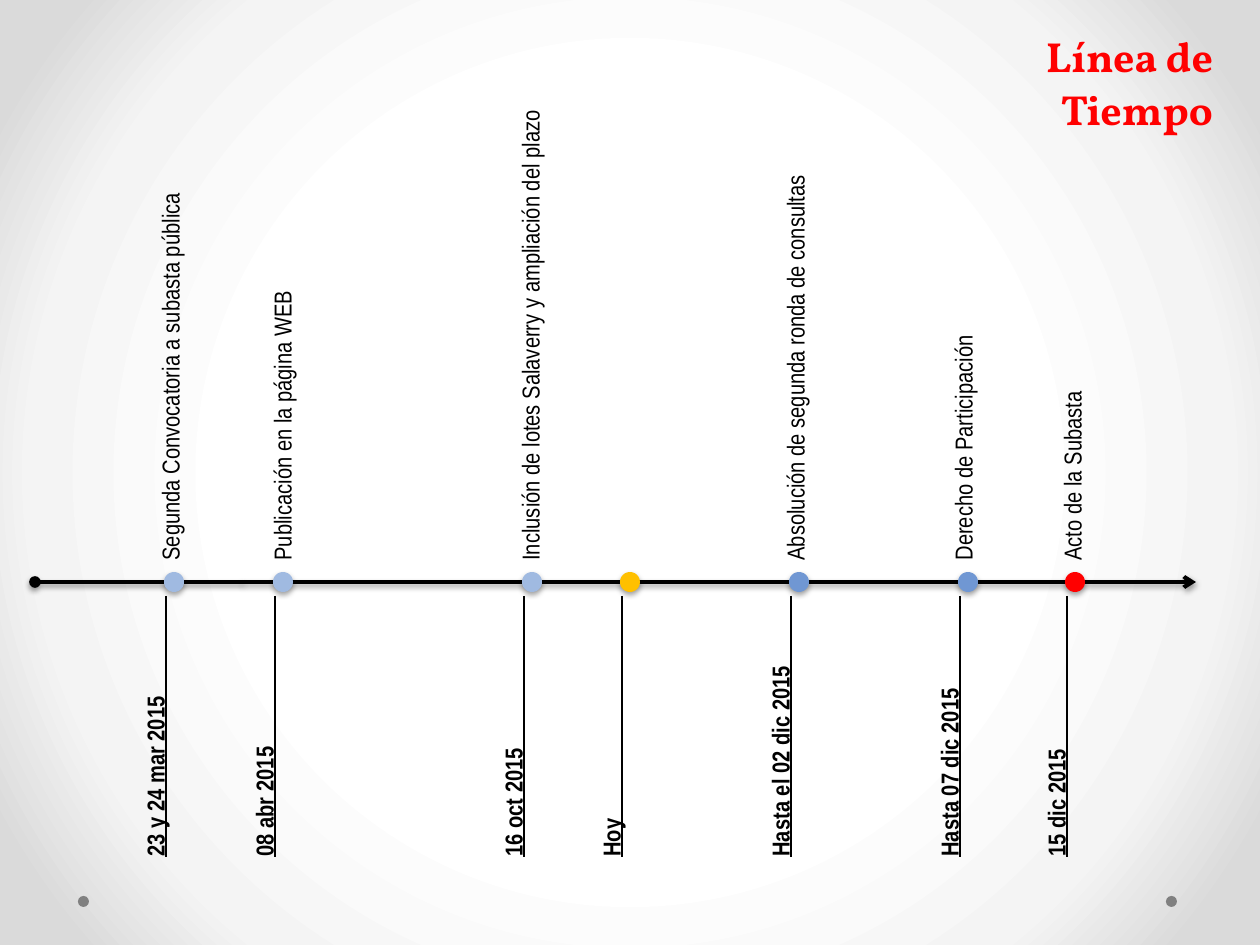
import pptx
import pptx.util
import pptx.oxml
import pptx.oxml.ns
from pptx.dml.color import RGBColor
from pptx.enum.shapes import MSO_CONNECTOR, MSO_SHAPE
from pptx.enum.text import MSO_ANCHOR, PP_ALIGN

THEME = {
    "black": "000000", "red": "FF0000", "grey": "808080", "amber": "FFC000",
    "pale_blue": "A0BAE1", "blue": "7097D3",
    "background": [(50, "FFFFFF"), (76, "F4F4F4"), (92, "DADADA")],
    "title_font": "Vollkorn", "label_font": "Arial Narrow",
    "title_size": 24, "label_size": 14, "axis_width": 2.25, "stem_width": 1.25,
}
PX = 914400 / 126
NAMESPACE = pptx.oxml.ns.nsdecls("a")


def box(*lengths):
    return [pptx.util.Emu(round(length * PX)) for length in lengths]


def add_text(slide, text, place, font, size, color="black", bold=False,
             underline=False, align=PP_ALIGN.LEFT, spacing=None, vertical=False):
    shape = slide.shapes.add_textbox(*box(*place))
    frame = shape.text_frame
    frame.word_wrap = True
    if vertical:
        frame._txBody.bodyPr.set("vert", "vert270")
    else:
        frame.vertical_anchor = MSO_ANCHOR.MIDDLE
        frame.margin_left = frame.margin_right = box(5)[0]
        frame.margin_top = frame.margin_bottom = 0
    paragraph = frame.paragraphs[0]
    paragraph.alignment = align
    if spacing:
        paragraph.line_spacing = pptx.util.Pt(spacing)
    run = paragraph.add_run()
    run.text = text
    run.font.name = THEME[font]
    run.font.size = pptx.util.Pt(THEME[size])
    run.font.color.rgb = RGBColor.from_string(THEME[color])
    run.font.bold = bold
    run.font.underline = underline


presentation = pptx.Presentation()
presentation.slide_width, presentation.slide_height = box(1260, 945)
slide = presentation.slides.add_slide(presentation.slide_layouts[6])

# Radial background
fill = slide.background.fill
fill.gradient()
gradient = slide.background._cSld.bg.bgPr.find(pptx.oxml.ns.qn("a:gradFill"))
stops = "".join(f'<a:gs pos="{position * 1000}"><a:srgbClr val="{color}"/></a:gs>'
                for position, color in THEME["background"])
gradient.getparent().replace(gradient, pptx.oxml.parse_xml(
    f'<a:gradFill {NAMESPACE} rotWithShape="1"><a:gsLst>{stops}</a:gsLst>'
    '<a:path path="circle"><a:fillToRect l="50000" t="50000" r="50000" b="50000"/>'
    '</a:path></a:gradFill>'))

# Title
add_text(slide, "Línea de Tiempo", (890, 55, 328, 52), "title_font", "title_size",
         color="red", bold=True, align=PP_ALIGN.RIGHT, spacing=30)

# Lines: two axis segments, then one stem per date
# Milestones: dot left, dot color, date, description, description left and top
milestones = [
    (164, "pale_blue", "23 y 24 mar 2015", "Segunda Convocatoria a subasta pública", 149, 174),
    (273, "pale_blue", "08 abr 2015", "Publicación en la página WEB", 261, 272),
    (522, "pale_blue", "16 oct 2015", "Inclusión de lotes Salaverry y ampliación del plazo", 509, 91),
    (620, "amber", "Hoy", None, None, None),
    (789, "blue", "Hasta el 02 dic 2015", "Absolución de segunda ronda de consultas", 774, 157),
    (958, "blue", "Hasta 07 dic 2015", "Derecho de Participación", 942, 318),
    (1065, "red", "15 dic 2015", "Acto de la Subasta", 1051, 373),
]
lines = [((35, 582, 243, 582), "axis_width", ("headEnd", "oval")),
         ((243, 582, 1196, 582), "axis_width", ("tailEnd", "arrow"))]
lines += [((left + 2, 596, left + 2, 857), "stem_width", None)
          for left, *_ in milestones]
shadow = ('<a:outerShdw blurRad="39370" dist="{distance}" dir="5400000" rotWithShape="0">'
          '<a:srgbClr val="000000"><a:alpha val="{alpha}"/></a:srgbClr></a:outerShdw>')
for ends, width, arrowhead in lines:
    connector = slide.shapes.add_connector(MSO_CONNECTOR.STRAIGHT, *box(*ends))
    connector.line.color.rgb = RGBColor.from_string(THEME["black"])
    connector.line.width = pptx.util.Pt(THEME[width])
    effect = ""
    if arrowhead:
        connector.line._get_or_add_ln().append(pptx.oxml.parse_xml(
            f'<a:{arrowhead[0]} {NAMESPACE} type="{arrowhead[1]}"/>'))
        effect = shadow.format(distance=20320, alpha=38000)
    connector._element.spPr.append(pptx.oxml.parse_xml(
        f'<a:effectLst {NAMESPACE}>{effect}</a:effectLst>'))

# Labels
for left, color, date, description, description_left, top in milestones:
    if description:
        add_text(slide, description, (description_left, top, 55, 573 - top),
                 "label_font", "label_size", vertical=True)
    add_text(slide, date, (left - 30, 592, 55, 277), "label_font", "label_size",
             bold=True, underline=True, vertical=True)

# Dots: milestones on the axis, two grey ones at the foot
dots = [(left, 572, 20, color) for left, color, *_ in milestones]
dots += [(left, 896, 11, "grey") for left in (78, 1166)]
for left, top, size, color in dots:
    shape = slide.shapes.add_shape(MSO_SHAPE.OVAL, *box(left, top, size, size))
    shape.fill.solid()
    shape.fill.fore_color.rgb = RGBColor.from_string(THEME[color])
    shape.line.fill.background()
    shape.shadow.inherit = False
    if color != "grey":
        effects = shape._element.spPr.find(pptx.oxml.ns.qn("a:effectLst"))
        effects.getparent().replace(effects, pptx.oxml.parse_xml(
            f'<a:effectLst {NAMESPACE}>{shadow.format(distance=22860, alpha=35000)}'
            '</a:effectLst>'))

presentation.save("out.pptx")
